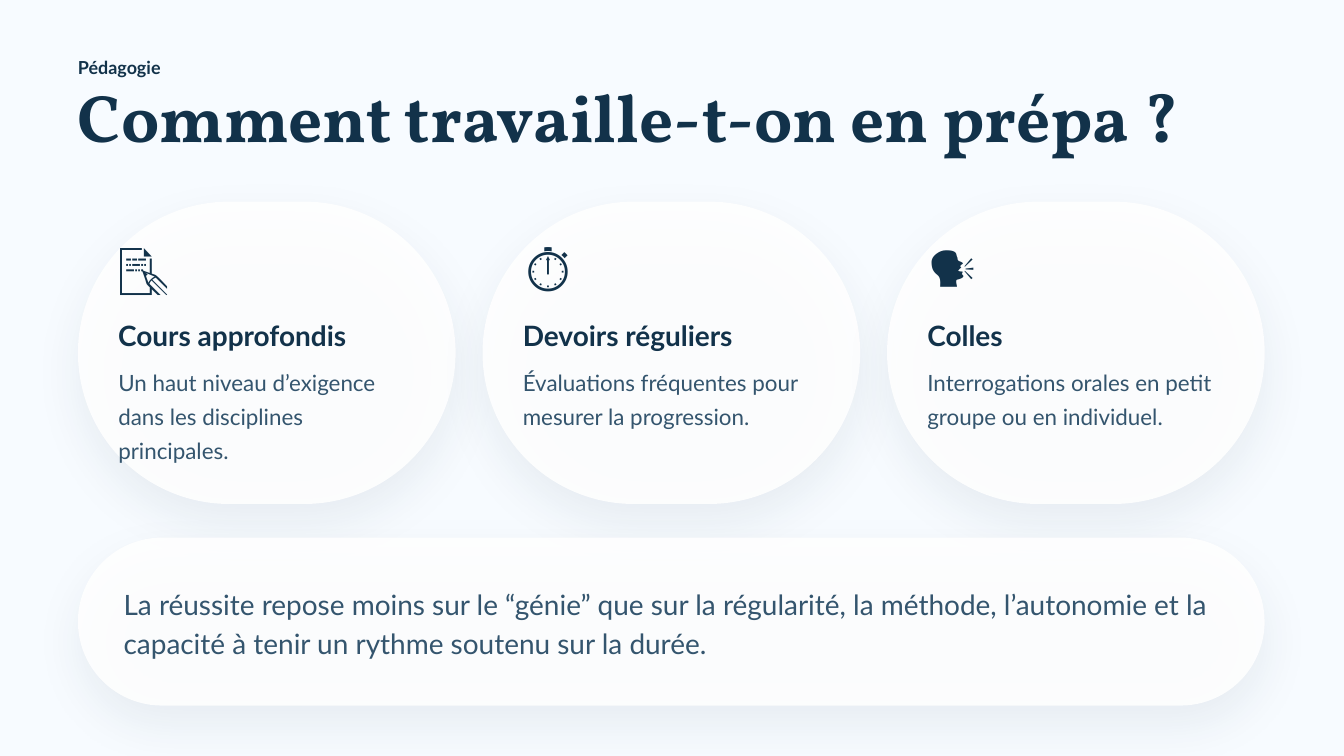
from lxml import etree
from pptx import Presentation
from pptx.dml.color import RGBColor
from pptx.enum.shapes import MSO_SHAPE
from pptx.oxml import parse_xml
from pptx.oxml.ns import qn
from pptx.util import Inches, Pt

BACKGROUND = RGBColor(0xF7, 0xFB, 0xFF)
WHITE = RGBColor(0xFF, 0xFF, 0xFF)
NAVY = RGBColor(0x12, 0x32, 0x4A)
SLATE = RGBColor(0x34, 0x55, 0x6E)

SHADOW = (
    '<a:effectLst xmlns:a="http://schemas.openxmlformats.org/drawingml/2006/main">'
    f'<a:outerShdw blurRad="{Pt(25.5)}" dist="{Pt(10.5)}" dir="5400000" algn="ctr" rotWithShape="0">'
    f'<a:srgbClr val="{NAVY}"><a:alpha val="7000"/></a:srgbClr>'
    '</a:outerShdw></a:effectLst>'
)

presentation = Presentation()
presentation.slide_width = Inches(10)
presentation.slide_height = Inches(10) * 9 // 16
slide = presentation.slides.add_slide(presentation.slide_layouts[6])
slide.background.fill.solid()
slide.background.fill.fore_color.rgb = BACKGROUND


def add_text(text, *, left, top, width, height, size, spacing, color=NAVY, font="Lato", bold=False):
    box = slide.shapes.add_textbox(Inches(left), Inches(top), Inches(width), Inches(height))
    frame = box.text_frame
    frame.word_wrap = True
    frame.margin_left = frame.margin_right = frame.margin_top = frame.margin_bottom = 0
    paragraph = frame.paragraphs[0]
    paragraph.line_spacing = Pt(spacing)
    run = paragraph.add_run()
    run.text = text
    run.font.name = font
    run.font.size = Pt(size)
    run.font.bold = bold
    run.font.color.rgb = color


def add_panel(left, top, width, height):
    shape = slide.shapes.add_shape(
        MSO_SHAPE.ROUNDED_RECTANGLE, Inches(left), Inches(top), Inches(width), Inches(height)
    )
    shape.adjustments[0] = 0.5
    shape.fill.solid()
    shape.fill.fore_color.rgb = WHITE
    shape.line.fill.background()
    properties = shape._element.spPr
    color = properties.find(qn("a:solidFill"))[0]
    etree.SubElement(color, qn("a:alpha")).set("val", "88000")
    shape.shadow.inherit = False
    properties.replace(properties.find(qn("a:effectLst")), parse_xml(SHADOW))


MARGIN = 0.58
CARD_STEP = 3.01
CARDS = [
    ("📝", "Cours approfondis", "Un haut niveau d’exigence dans les disciplines principales."),
    ("⏱️", "Devoirs réguliers", "Évaluations fréquentes pour mesurer la progression."),
    ("🗣️", "Colles", "Interrogations orales en petit groupe ou en individuel."),
]

for index in range(len(CARDS)):
    add_panel(MARGIN + index * CARD_STEP, 1.5, 2.81, 2.25)
add_panel(MARGIN, 4, 8.83, 1.25)

add_text("Pédagogie", left=MARGIN, top=0.38, width=9.01, height=0.2, size=9.6, spacing=14.4, bold=True)
add_text("Comment travaille-t-on en prépa ?", left=MARGIN, top=0.66, width=9.01, height=0.5,
         size=36, spacing=36, font="Vollkorn", bold=True)

for index, (icon, title, description) in enumerate(CARDS):
    left = MARGIN + 0.3 + index * CARD_STEP
    add_text(icon, left=left, top=1.79, width=2.27, height=0.42, size=27, spacing=30)
    add_text(title, left=left, top=2.33, width=2.27, height=0.29, size=15, spacing=21, bold=True)
    add_text(description, left=left, top=2.7, width=2.22, height=0.75, size=12, spacing=18, color=SLATE)

add_text("La réussite repose moins sur le “génie” que sur la régularité, la méthode, "
         "l’autonomie et la capacité à tenir un rythme soutenu sur la durée.",
         left=0.92, top=4.33, width=8.17, height=0.58, size=15, spacing=21, color=SLATE)

presentation.save("out.pptx")
